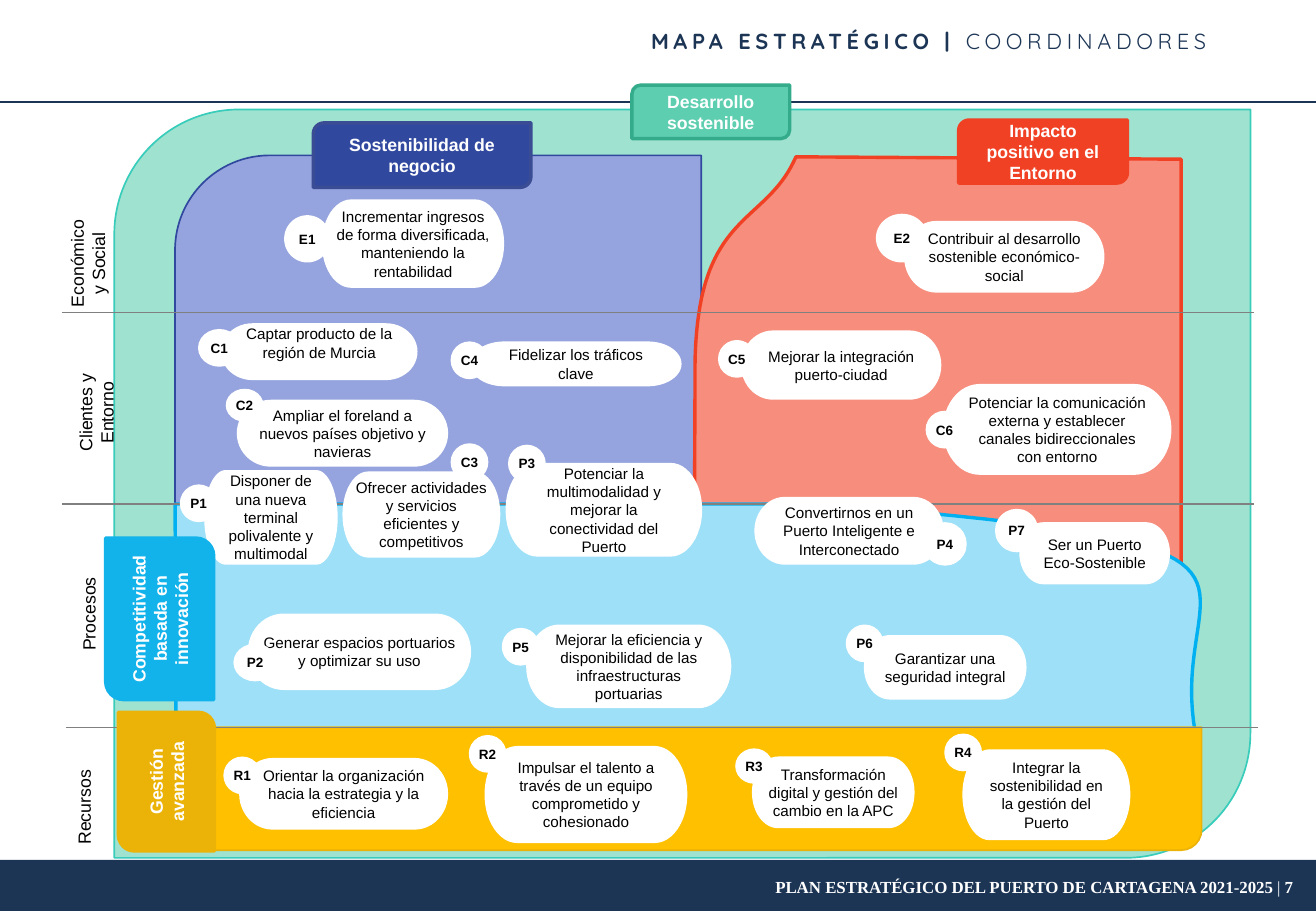
from lxml import etree
from pptx import Presentation
from pptx.dml.color import RGBColor
from pptx.enum.shapes import MSO_CONNECTOR, MSO_SHAPE
from pptx.enum.text import MSO_ANCHOR, PP_ALIGN
from pptx.oxml.ns import qn
from pptx.util import Cm, Pt

RECT = MSO_SHAPE.RECTANGLE
PANEL = MSO_SHAPE.ROUND_2_DIAG_RECTANGLE
PILL = MSO_SHAPE.FLOWCHART_TERMINATOR
CIRCLE = MSO_SHAPE.OVAL
STRAIGHT = MSO_CONNECTOR.STRAIGHT
TOP, MIDDLE = MSO_ANCHOR.TOP, MSO_ANCHOR.MIDDLE
LEFT, CENTER, RIGHT = PP_ALIGN.LEFT, PP_ALIGN.CENTER, PP_ALIGN.RIGHT

WIDTH, HEIGHT = 27.51, 19.05
NAVY, WHITE, BLACK, GRAY = "1C3555", "FFFFFF", "000000", "808080"
WIDE, MEDIUM, NARROW = 0.25, 0.2, 0.1  # side insets
BADGE = 0.79


def color(hex_code):
    return RGBColor.from_string(hex_code)


def bezier(start, control_1, control_2, end, steps=40):
    """Points along a cubic curve, both ends included."""
    points = []
    for step in range(steps + 1):
        t = step / steps
        weights = ((1 - t) ** 3, 3 * t * (1 - t) ** 2, 3 * t * t * (1 - t), t ** 3)
        corners = (start, control_1, control_2, end)
        points.append(tuple(sum(w * c[axis] for w, c in zip(weights, corners))
                            for axis in (0, 1)))
    return points


class StrategyMap:
    def __init__(self, slide, font="Arial"):
        self.shapes = slide.shapes
        self.font = font

    def paint(self, shape, fill, line=None, weight=1):
        shape.shadow.inherit = False
        shape.fill.solid()
        shape.fill.fore_color.rgb = color(fill)
        if line:
            shape.line.color.rgb = color(line)
            shape.line.width = Pt(weight)
        else:
            shape.line.fill.background()

    def format_run(self, run, size, ink, bold, font=None):
        run.font.name = font or self.font
        run.font.size = Pt(size)
        run.font.bold = bold
        run.font.color.rgb = color(ink)

    def frame(self, shape, anchor, side=WIDE, edge=0.13):
        frame = shape.text_frame
        frame.word_wrap = True
        frame.vertical_anchor = anchor
        frame.margin_left = frame.margin_right = Cm(side)
        frame.margin_top = frame.margin_bottom = Cm(edge)
        return frame

    def set_text(self, frame, text, size, ink=BLACK, bold=False):
        frame.text = text
        for paragraph in frame.paragraphs:
            paragraph.alignment = CENTER
            for run in paragraph.runs:
                self.format_run(run, size, ink, bold)

    def shape(self, kind, box, fill, line=None, weight=1):
        shape = self.shapes.add_shape(kind, *map(Cm, box))
        self.paint(shape, fill, line, weight)
        return shape

    def region(self, points, fill, line):
        corners = [(Cm(x), Cm(y)) for x, y in points]
        builder = self.shapes.build_freeform(*corners[0])
        builder.add_line_segments(corners[1:], close=True)
        self.paint(builder.convert_to_shape(), fill, line, 2)

    def rule(self, left, right, y, line=GRAY, weight=0.75):
        rule = self.shapes.add_connector(STRAIGHT, Cm(left), Cm(y), Cm(right), Cm(y))
        rule.line.color.rgb = color(line)
        rule.line.width = Pt(weight)
        etree.SubElement(rule._element.spPr, qn("a:effectLst"))

    def heading(self, box, parts, size, ink, font, align, anchor, spacing=0):
        """A one-line text whose parts are (text, bold) pairs."""
        frame = self.frame(self.shapes.add_textbox(*map(Cm, box)), anchor)
        line = frame.paragraphs[0]
        line.alignment = align
        for text, bold in parts:
            run = line.add_run()
            run.text = text
            self.format_run(run, size, ink, bold, font)
            if spacing:
                run._r.get_or_add_rPr().set("spc", str(spacing))

    def perspective(self, box, text):
        label = self.shapes.add_textbox(*map(Cm, box))
        label.rotation = 270
        self.set_text(self.frame(label, TOP), text, 10.5)

    def tab(self, box, text, fill, line, rotation=0):
        tab = self.shape(PANEL, box, fill, line, 2)
        tab.rotation = rotation
        side = MEDIUM if rotation else WIDE
        self.set_text(self.frame(tab, MIDDLE, side), text, 10.5, WHITE, True)

    def objective(self, code, pill_box, text, side, badge_box):
        pill = self.shape(PILL, pill_box, WHITE)
        frame = self.frame(pill, MIDDLE, side)
        self.set_text(frame, text, 9)
        if code == "C1":  # its text sits one half line higher
            frame.margin_bottom = Cm(0.5)
        x, y, *size = badge_box
        badge = self.shape(CIRCLE, (x, y, *(size or (BADGE, BADGE))), WHITE)
        frame = self.frame(badge, MIDDLE, 0, 0)
        frame.word_wrap = False
        self.set_text(frame, code, 8, bold=True)


PERSPECTIVES = [
    ((0.56, 4.95, 2.51, 1.12), "Económico\ny Social"),
    ((0.1, 8.26, 3.4, 0.74), "Clientes y Entorno"),
    ((0.37, 12.47, 3, 0.74), "Procesos"),
    ((0.36, 16.51, 2.82, 0.74), "Recursos"),
]

TABS = [
    ((20.04, 2.51, 3.53, 1.32), "Impacto positivo en el Entorno", "F14124", "F14124", 0),
    ((6.55, 2.57, 4.55, 1.35), "Sostenibilidad de negocio", "31489F", "3A4C94", 0),
    ((13.21, 1.78, 3.3, 1.12), "Desarrollo sostenible", "5DCEAF", "34AC8B", 0),
    ((1.65, 11.81, 3.38, 2.26), "Competitividad basada en innovación", "12B2EB", "12B2EB", 270),
    ((2.03, 15.34, 2.9, 2.01), "Gestión avanzada", "EBB207", "EBB207", 270),
]

# Code, pill box, text, side inset, badge position (and size if not standard)
OBJECTIVES = [
    ("E1", (6.73, 4.17, 3.81, 1.85), "Incrementar ingresos de forma diversificada, manteniendo la rentabilidad", NARROW, (5.94, 4.5, 0.97, 0.99)),
    ("E2", (18.9, 4.62, 4.19, 1.5), "Contribuir al desarrollo sostenible económico-social", WIDE, (18.31, 4.47, 1.09, 1.02)),
    ("C1", (4.62, 6.76, 4.11, 1.19), "Captar producto de la región de Murcia", WIDE, (4.14, 6.88, 0.89, 0.79)),
    ("C2", (4.95, 8.36, 4.42, 1.4), "Ampliar el foreland a nuevos países objetivo y navieras", WIDE, (4.72, 8.13, 0.79, 0.69)),
    ("C3", (7.16, 9.86, 3.3, 1.8), "Ofrecer actividades y servicios eficientes y competitivos", NARROW, (9.42, 9.27)),
    ("C4", (9.83, 7.14, 4.42, 0.94), "Fidelizar los tráficos clave", WIDE, (9.42, 7.14)),
    ("C5", (15.49, 6.91, 4.19, 1.45), "Mejorar la integración puerto-ciudad", NARROW, (15.01, 7.11)),
    ("C6", (19.71, 8.03, 4.78, 1.9), "Potenciar la comunicación externa y establecer canales bidireccionales con entorno", WIDE, (19.35, 8.59)),
    ("P1", (4.27, 9.83, 2.79, 1.98), "Disponer de una nueva terminal polivalente y multimodal", NARROW, (3.76, 10.13)),
    ("P2", (5.18, 12.83, 4.67, 1.6), "Generar espacios portuarios y optimizar su uso", NARROW, (4.88, 13.46, 0.91, 0.79)),
    ("P3", (10.57, 9.68, 4.11, 1.96), "Potenciar la multimodalidad y mejorar la conectividad del Puerto", WIDE, (10.62, 9.3)),
    ("P4", (15.77, 10.39, 3.96, 1.42), "Convertirnos en un Puerto Inteligente e Interconectado", WIDE, (19.3, 10.92, 0.91, 0.91)),
    ("P5", (11, 13.06, 4.29, 1.75), "Mejorar la eficiencia y disponibilidad de las infraestructuras portuarias", NARROW, (10.49, 13.13)),
    ("P6", (18.06, 13.28, 3.4, 1.35), "Garantizar una seguridad integral", WIDE, (17.68, 13.06)),
    ("P7", (21.31, 10.92, 3.15, 1.3), "Ser un Puerto\nEco-Sostenible", WIDE, (20.8, 10.64, 0.91, 0.91)),
    ("R1", (5, 15.85, 4.37, 1.5), "Orientar la organización hacia la estrategia y la eficiencia", MEDIUM, (4.67, 15.82)),
    ("R2", (10.13, 15.6, 4.24, 2.03), "Impulsar el talento a través de un equipo comprometido y cohesionado", MEDIUM, (9.8, 15.37)),
    ("R3", (15.72, 15.82, 3.4, 1.5), "Transformación digital y gestión del cambio en la APC", NARROW, (15.37, 15.65, 0.79, 0.74)),
    ("R4", (20.12, 15.67, 3.51, 1.9), "Integrar la sostenibilidad en la gestión del Puerto", WIDE, (19.74, 15.34)),
]


def main():
    deck = Presentation()
    deck.slide_width, deck.slide_height = Cm(WIDTH), Cm(HEIGHT)
    strategy = StrategyMap(deck.slides.add_slide(deck.slide_layouts[6]))

    # Header and footer
    strategy.shape(RECT, (0, 17.98, WIDTH, 1.07), NAVY)
    strategy.rule(0, WIDTH, 2.13, NAVY, 1.5)
    strategy.heading((7.87, 18.01, 19.41, 1.07),
                     [("PLAN ESTRATÉGICO DEL PUERTO DE CARTAGENA 2021-2025 ", True),
                      ("| ", False), ("7", True)],
                     10, WHITE, "Times New Roman", RIGHT, MIDDLE)
    strategy.heading((13.36, 0.46, 13.7, 0.81),
                     [("MAPA ESTRATÉGICO | ", True), ("COORDINADORES", False)],
                     12.9, NAVY, "Quicksand", LEFT, TOP, spacing=280)

    # Strategic areas
    strategy.shape(PANEL, (2.39, 2.29, 23.75, 15.65), "9EE2CF", "38CCBA")
    business = strategy.shape(PANEL, (3.66, 3.25, 11, 11.84), "95A4DE", "31489F")
    business.adjustments[0] = 0.18
    impact_edge = bezier((14.53, 7.95), (14.48, 4.37), (15.98, 4.8), (16.64, 3.28))
    strategy.region(impact_edge + [(24.69, 3.33), (24.69, 15.21), (14.5, 15.21)],
                    "F78D7C", "F14124")
    innovation_edge = bezier((17.15, 10.54), (27.99, 11.4), (24.36, 11.91), (24.99, 15.34))
    strategy.region([(3.66, 10.54)] + innovation_edge + [(3.68, 15.34)],
                    "9EE0F8", "00B0F0")
    strategy.shape(PANEL, (3.89, 15.21, 21.23, 2.57), "FFC000", "EBB207")

    # Perspectives
    for left, right, y in ((1.3, 26.21, 6.53), (1.3, 26.21, 10.54), (1.37, 26.29, 15.21)):
        strategy.rule(left, right, y)
    for perspective in PERSPECTIVES:
        strategy.perspective(*perspective)

    # Objectives and area tabs
    for objective in OBJECTIVES:
        strategy.objective(*objective)
    for tab in TABS:
        strategy.tab(*tab)

    deck.save("out.pptx")


if __name__ == "__main__":
    main()
